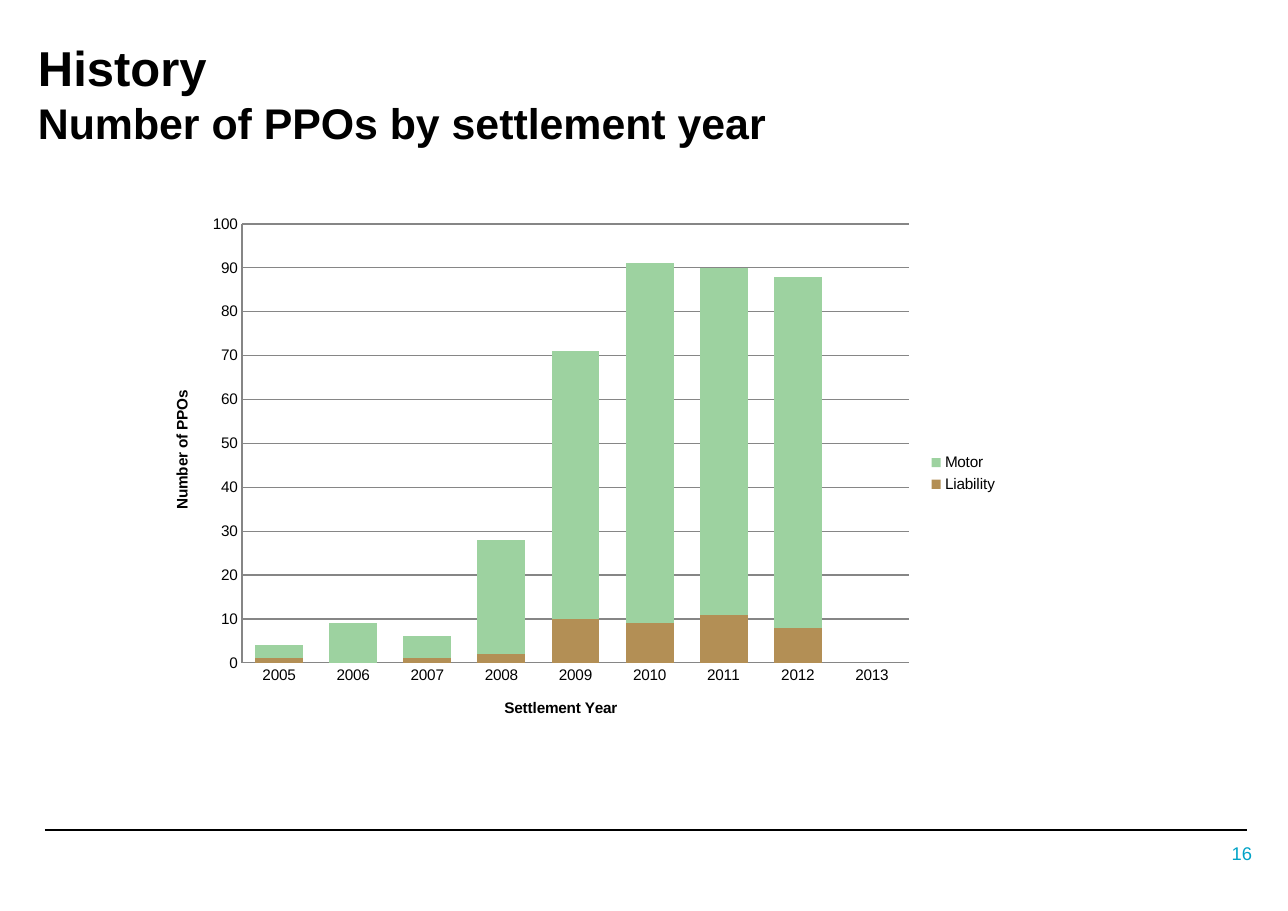
from lxml import etree
from pptx import Presentation
from pptx.chart.data import CategoryChartData
from pptx.dml.color import RGBColor
from pptx.enum.chart import XL_CHART_TYPE, XL_LEGEND_POSITION, XL_TICK_MARK
from pptx.enum.shapes import MSO_CONNECTOR
from pptx.enum.text import MSO_ANCHOR, PP_ALIGN
from pptx.oxml import parse_xml
from pptx.oxml.ns import nsdecls, qn
from pptx.util import Pt

PX = 8298
FONT = "Arial"
BLACK = RGBColor(0x00, 0x00, 0x00)
GREY = RGBColor(0x86, 0x86, 0x86)
TEAL = RGBColor(0x00, 0xA3, 0xC7)
BROWN = RGBColor(0xB3, 0x8F, 0x55)
GREEN = RGBColor(0x9D, 0xD2, 0xA0)


def style_font(font, size, color, bold=False):
    font.name = FONT
    font.size = Pt(size)
    font.bold = bold
    font.color.rgb = color


def add_box(left, top, width, height, side_inset, top_inset):
    box = page.shapes.add_textbox(left * PX, top * PX, width * PX, height * PX)
    frame = box.text_frame
    frame.word_wrap = True
    frame.margin_left = frame.margin_right = side_inset * PX
    frame.margin_top = top_inset * PX
    frame.margin_bottom = 7 * PX
    return frame


deck = Presentation()
deck.slide_width = 1288 * PX
deck.slide_height = 911 * PX
page = deck.slides.add_slide(deck.slide_layouts[6])

rule = page.shapes.add_connector(
    MSO_CONNECTOR.STRAIGHT, 45 * PX, 830 * PX, 1247 * PX, 830 * PX
)
rule.line.color.rgb = BLACK
rule.line.width = Pt(0.75)
etree.SubElement(rule.element.spPr, qn("a:effectLst"))

title = add_box(26, 26, 1017, 152, 12, 12)
title.text = "History\nNumber of PPOs by settlement year"
for para, size in zip(title.paragraphs, (32, 28)):
    style_font(para.runs[0].font, size, BLACK, bold=True)

number = add_box(1177, 840, 89, 26, 14, 7)
number.vertical_anchor = MSO_ANCHOR.MIDDLE
number.text = "16"
number.paragraphs[0].alignment = PP_ALIGN.RIGHT
style_font(number.paragraphs[0].runs[0].font, 12, TEAL)

data = CategoryChartData()
data.categories = [str(year) for year in range(2005, 2014)]
data.add_series("Liability", (1, 0, 1, 2, 10, 9, 11, 8))
data.add_series("Motor", (3, 9, 5, 26, 61, 82, 79, 80))
chart = page.shapes.add_chart(
    XL_CHART_TYPE.COLUMN_STACKED, 151 * PX, 205 * PX, 858 * PX, 537 * PX, data
).chart
style_font(chart.font, 10, BLACK)
chart.has_title = False
chart.has_legend = True
chart.legend.position = XL_LEGEND_POSITION.RIGHT
chart.legend.include_in_layout = False

plot = chart.plots[0]
plot.gap_width = 55
plot.overlap = 100
plot.vary_by_categories = False
for series, color in zip(plot.series, (BROWN, GREEN)):
    series.format.fill.solid()
    series.format.fill.fore_color.rgb = color

for axis, label in (
    (chart.category_axis, "Settlement Year"),
    (chart.value_axis, "Number of PPOs"),
):
    axis.major_tick_mark = XL_TICK_MARK.NONE
    axis.minor_tick_mark = XL_TICK_MARK.NONE
    axis.format.line.color.rgb = GREY
    axis.format.line.width = Pt(0.75)
    axis.axis_title.text_frame.text = label
    span = axis.axis_title.text_frame.paragraphs[0].runs[0]
    style_font(span.font, 10, BLACK, bold=True)

values = chart.value_axis
values.minimum_scale = 0
values.maximum_scale = 100
values.major_unit = 10
values.has_major_gridlines = True
values.major_gridlines.format.line.color.rgb = GREY
values.major_gridlines.format.line.width = Pt(0.75)

plot_area = chart.element.find(".//" + qn("c:plotArea"))
for layout in plot_area.findall(qn("c:layout")):
    plot_area.remove(layout)
plot_area.insert(0, parse_xml(
    f'<c:layout {nsdecls("c")}><c:manualLayout>'
    '<c:layoutTarget val="inner"/><c:xMode val="edge"/><c:yMode val="edge"/>'
    f'<c:x val="{91 / 858:.4f}"/><c:y val="{19 / 537:.4f}"/>'
    f'<c:w val="{667 / 858:.4f}"/><c:h val="{439 / 537:.4f}"/>'
    '</c:manualLayout></c:layout>'
))

deck.save("out.pptx")
